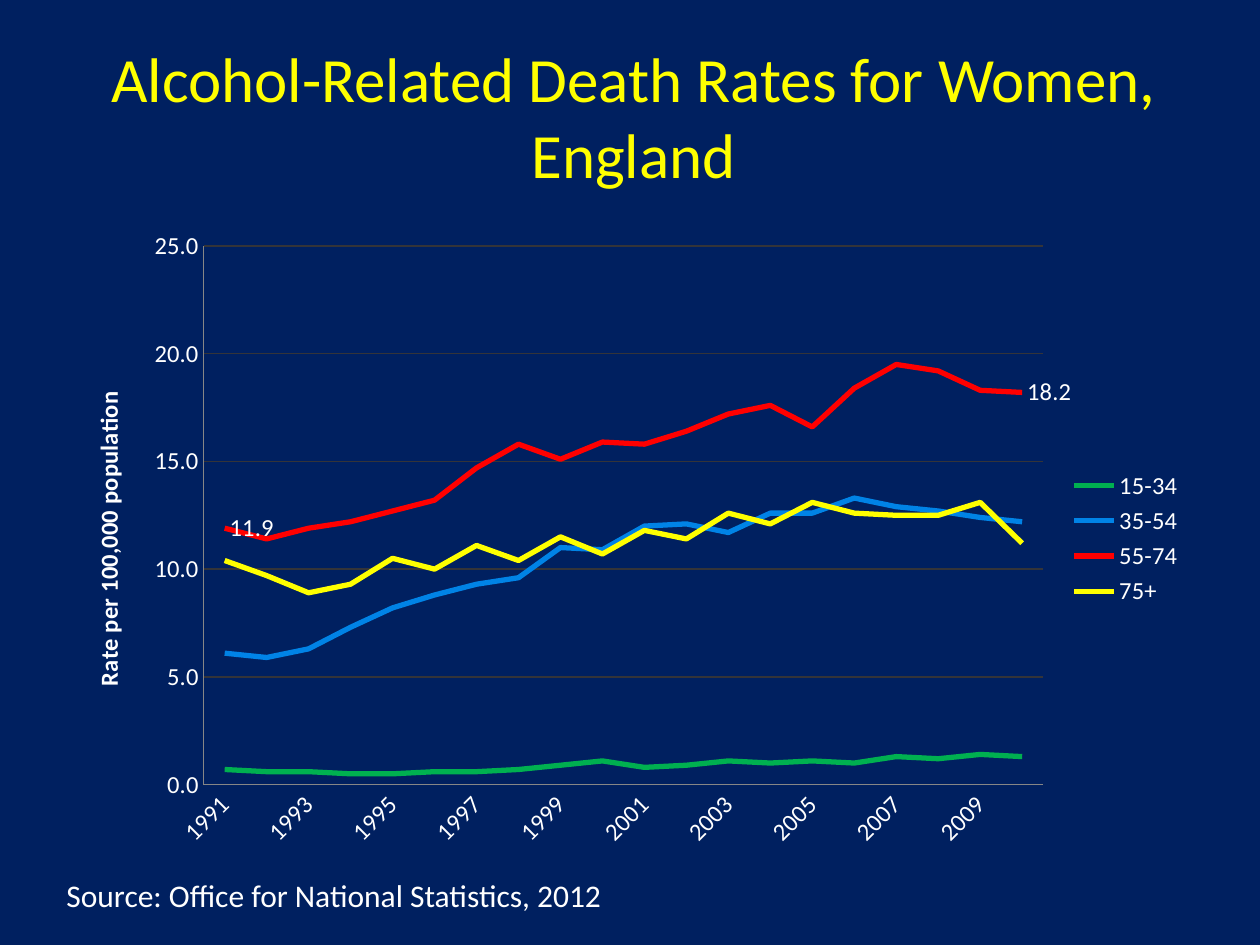
from dataclasses import dataclass

from lxml import etree
from pptx import Presentation
from pptx import util as u
from pptx.chart.data import CategoryChartData
from pptx.dml.color import RGBColor
from pptx.enum import chart as ch, text
from pptx.oxml.ns import qn


@dataclass(frozen=True)
class Theme:
    font: str = "Calibri"
    background: str = "002060"
    title: str = "FFFF00"
    body: str = "FFFFFF"
    grid: str = "343439"
    axis: str = "868686"
    title_size: int = 36
    source_size: int = 18
    chart_size: int = 14
    series_width: int = 3


@dataclass(frozen=True)
class AgeGroup:
    name: str
    color: str
    rates: tuple[float, ...]
    labelled: tuple[int, ...] = ()


@dataclass(frozen=True)
class Area:
    left: float
    top: float
    width: float
    height: float

    def lengths(self) -> tuple:
        return tuple(u.Cm(v) for v in (self.left, self.top, self.width, self.height))


THEME = Theme()
TITLE_AREA = Area(0.71, 0.74, 24.13, 3.18)
SOURCE_AREA = Area(1.09, 17.53, 11.43, 1.02)
CHART_AREA = Area(1.3, 4.39, 22.81, 12.93)
PLOT_LAYOUT = {"x": 0.123, "y": 0.044, "w": 0.742, "h": 0.84}  # shares of the chart
YEARS = range(1991, 2011)
AGE_GROUPS = (
    AgeGroup("15-34", "00B050", (0.7, 0.6, 0.6, 0.5, 0.5, 0.6, 0.6, 0.7, 0.9, 1.1,
                                 0.8, 0.9, 1.1, 1, 1.1, 1, 1.3, 1.2, 1.4, 1.3)),
    AgeGroup("35-54", "0083E6", (6.1, 5.9, 6.3, 7.3, 8.2, 8.8, 9.3, 9.6, 11, 10.9,
                                 12, 12.1, 11.7, 12.6, 12.6, 13.3, 12.9, 12.7, 12.4, 12.2)),
    AgeGroup("55-74", "FF0000", (11.9, 11.4, 11.9, 12.2, 12.7, 13.2, 14.7, 15.8, 15.1, 15.9,
                                 15.8, 16.4, 17.2, 17.6, 16.6, 18.4, 19.5, 19.2, 18.3, 18.2),
             labelled=(0, len(YEARS) - 1)),
    AgeGroup("75+", "FFFF00", (10.4, 9.7, 8.9, 9.3, 10.5, 10, 11.1, 10.4, 11.5, 10.7,
                               11.8, 11.4, 12.6, 12.1, 13.1, 12.6, 12.5, 12.5, 13.1, 11.2)),
)


def style_font(font, size: int, color: str, bold: bool = False) -> None:
    font.name = THEME.font
    font.size = u.Pt(size)
    font.bold = bold
    font.color.rgb = RGBColor.from_string(color)


def style_line(line, color: str, width: float) -> None:
    line.color.rgb = RGBColor.from_string(color)
    line.width = u.Pt(width)


def add_run(para, wording: str, size: int, color: str, bold: bool = False) -> None:
    span = para.add_run()
    span.text = wording
    style_font(span.font, size, color, bold)


def add_title(page, wording: str) -> None:
    box = page.shapes.title
    box.left, box.top, box.width, box.height = TITLE_AREA.lengths()
    box.text_frame.vertical_anchor = text.MSO_ANCHOR.MIDDLE
    para = box.text_frame.paragraphs[0]
    para.alignment = text.PP_ALIGN.CENTER
    add_run(para, wording, THEME.title_size, THEME.title)


def add_source(page, wording: str) -> None:
    frame = page.shapes.add_textbox(*SOURCE_AREA.lengths()).text_frame
    frame.word_wrap = False
    frame.auto_size = text.MSO_AUTO_SIZE.SHAPE_TO_FIT_TEXT
    add_run(frame.paragraphs[0], wording, THEME.source_size, THEME.body)


def place_plot(chart) -> None:
    """Fix the inner plot rectangle inside the chart."""
    plot_area = chart.element.find(".//" + qn("c:plotArea"))
    for old in plot_area.findall(qn("c:layout")):
        plot_area.remove(old)
    layout = etree.Element(qn("c:layout"))
    manual = etree.SubElement(layout, qn("c:manualLayout"))
    settings = {"layoutTarget": "inner", "xMode": "edge", "yMode": "edge", **PLOT_LAYOUT}
    for tag, value in settings.items():
        etree.SubElement(manual, qn(f"c:{tag}")).set("val", str(value))
    plot_area.insert(0, layout)


def style_year_axis(axis) -> None:
    axis.major_tick_mark = ch.XL_TICK_MARK.NONE
    style_line(axis.format.line, THEME.axis, 0.75)
    style_font(axis.tick_labels.font, THEME.chart_size, THEME.body)
    # Slanted labels, every second year
    slant = axis._element.find(qn("c:txPr")).find(qn("a:bodyPr"))
    slant.set("rot", str(-45 * 60000))
    slant.set("vert", "horz")
    skip = etree.Element(qn("c:tickLblSkip"))
    skip.set("val", "2")
    axis._element.find(qn("c:noMultiLvlLbl")).addprevious(skip)


def style_rate_axis(axis, wording: str) -> None:
    axis.minimum_scale, axis.maximum_scale, axis.major_unit = 0, 25, 5
    axis.major_tick_mark = ch.XL_TICK_MARK.NONE
    style_line(axis.format.line, THEME.axis, 0.75)
    style_line(axis.major_gridlines.format.line, THEME.grid, 0.75)
    axis.tick_labels.number_format = "0.0"
    axis.tick_labels.number_format_is_linked = False
    style_font(axis.tick_labels.font, THEME.chart_size, THEME.body)
    para = axis.axis_title.text_frame.paragraphs[0]
    add_run(para, wording, THEME.chart_size, THEME.body, bold=True)


def style_series(series, group: AgeGroup) -> None:
    series.smooth = False
    series.marker.style = ch.XL_MARKER_STYLE.NONE
    style_line(series.format.line, group.color, THEME.series_width)
    for index in group.labelled:
        label = series.points[index].data_label
        style_font(label.font, THEME.chart_size, THEME.body)
        label.position = ch.XL_LABEL_POSITION.RIGHT


def add_rate_chart(page) -> None:
    data = CategoryChartData(number_format="0.0")
    data.categories = [str(year) for year in YEARS]
    for group in AGE_GROUPS:
        data.add_series(group.name, group.rates)
    chart = page.shapes.add_chart(ch.XL_CHART_TYPE.LINE, *CHART_AREA.lengths(), data).chart
    chart.has_title = False
    style_font(chart.font, THEME.chart_size, THEME.body)
    chart.has_legend = True
    chart.legend.position = ch.XL_LEGEND_POSITION.RIGHT
    chart.legend.include_in_layout = False
    style_font(chart.legend.font, THEME.chart_size, THEME.body)
    place_plot(chart)
    style_year_axis(chart.category_axis)
    style_rate_axis(chart.value_axis, "Rate per 100,000 population")
    plot = chart.plots[0]
    plot.vary_by_categories = False
    for series, group in zip(plot.series, AGE_GROUPS):
        style_series(series, group)


def main() -> None:
    deck = Presentation()
    deck.slide_width, deck.slide_height = u.Cm(25.4), u.Cm(19.05)
    page = deck.slides.add_slide(deck.slide_layouts.get_by_name("Title Only"))
    page.background.fill.solid()
    page.background.fill.fore_color.rgb = RGBColor.from_string(THEME.background)
    add_title(page, "Alcohol-Related Death Rates for Women, England")
    add_source(page, "Source: Office for National Statistics, 2012")
    add_rate_chart(page)
    deck.save("out.pptx")


if __name__ == "__main__":
    main()
